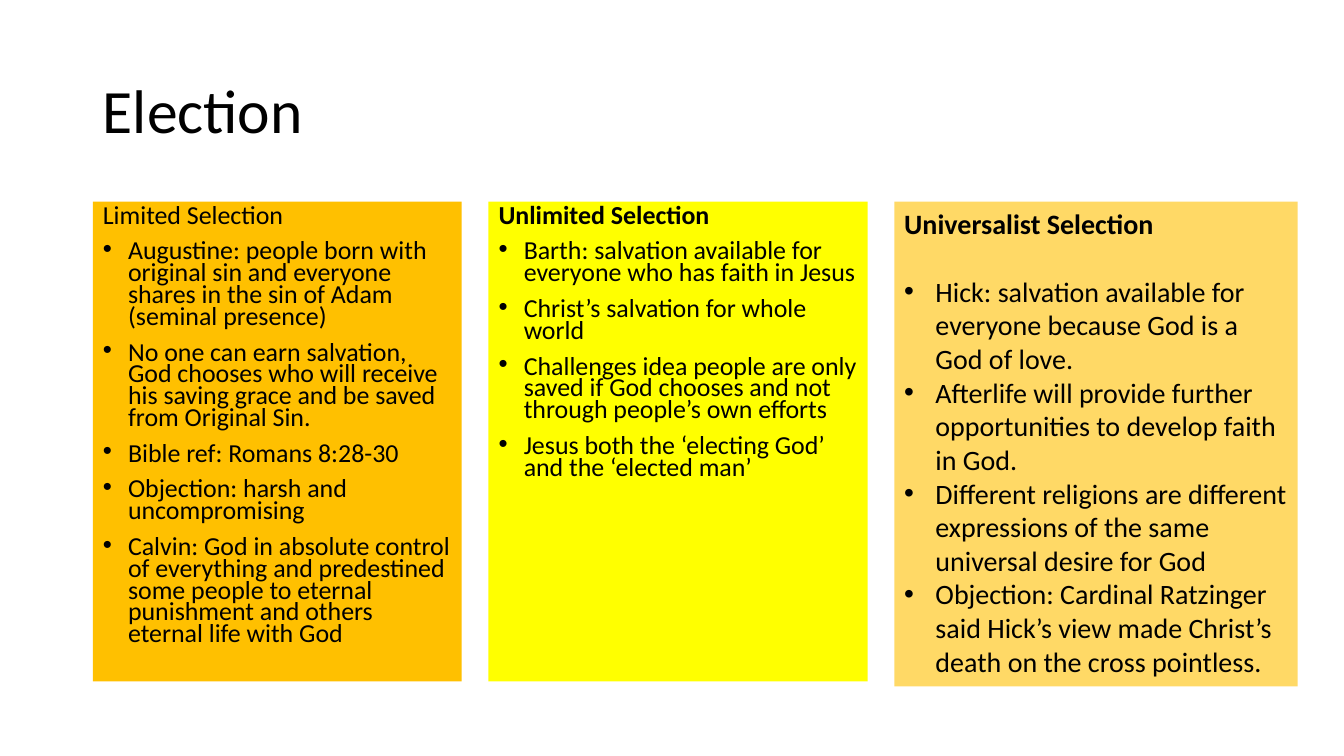
from dataclasses import dataclass

from lxml import etree
from pptx import Presentation
from pptx.dml.color import RGBColor
from pptx.enum.text import MSO_ANCHOR, MSO_AUTO_SIZE, PP_ALIGN
from pptx.oxml.ns import qn
from pptx.util import Inches, Pt

LEFT, MIDDLE, TOP = PP_ALIGN.LEFT, MSO_ANCHOR.MIDDLE, MSO_ANCHOR.TOP
NO_FIT, GROW = MSO_AUTO_SIZE.NONE, MSO_AUTO_SIZE.SHAPE_TO_FIT_TEXT

# Content
TITLE = "Election"
LIMITED = ("Limited Selection", [
    "Augustine: people born with original sin and everyone shares in the sin of Adam (seminal presence)",
    "No one can earn salvation, God chooses who will receive his saving grace and be saved from Original Sin.",
    "Bible ref: Romans 8:28-30",
    "Objection: harsh and uncompromising",
    "Calvin: God in absolute control of everything and predestined some people to eternal "
    "punishment and others eternal life with God",
])
UNLIMITED = ("Unlimited Selection", [
    "Barth: salvation available for everyone who has faith in Jesus",
    "Christ’s salvation for whole world",
    "Challenges idea people are only saved if God chooses and not through people’s own efforts",
    "Jesus both the ‘electing God’ and the ‘elected man’",
])
UNIVERSALIST = ("Universalist Selection", [
    "Hick: salvation available for everyone because God is a God of love.",
    "Afterlife will provide further opportunities to develop faith in God.",
    "Different religions are different expressions of the same universal desire for God",
    "Objection: Cardinal Ratzinger said Hick’s view made Christ’s death on the cross pointless.",
])


@dataclass(frozen=True)
class Theme:
    font: str = "Calibri"
    text: str = "000000"
    orange: str = "FFC000"
    yellow: str = "FFFF00"
    sand: str = "FFD966"
    title_size: float = 44
    dense_size: float = 18.5
    open_size: float = 20


@dataclass(frozen=True)
class ListStyle:
    size: float
    indent: float
    line: float
    before: float
    heading_after: float


T = Theme()
DENSE = ListStyle(T.dense_size, 0.25, 0.7, 10, 0)
OPEN = ListStyle(T.open_size, 0.31, 1.0, 0, 24.4)

# Grid, in inches
SLIDE_W, SLIDE_H = 13.33, 7.5
MARGIN, GAP = 0.92, 0.265
TITLE_TOP, TITLE_H = 0.4, 1.45
COLUMN_TOP = 2

# Content, style, fill, width, height, bold heading
COLUMNS = [
    (LIMITED, DENSE, T.orange, 3.66, 4.76, False),
    (UNLIMITED, DENSE, T.yellow, 3.76, 4.76, True),
    (UNIVERSALIST, OPEN, T.sand, 4.0, 4.81, True),
]


def place(sp, x, y, w, h):
    sp.left, sp.top, sp.width, sp.height = (Inches(v) for v in (x, y, w, h))


def add_run(p, text, size, bold=False):
    r = p.add_run()
    r.text = text
    r.font.name, r.font.size, r.font.bold = T.font, Pt(size), bold
    r.font.color.rgb = RGBColor.from_string(T.text)


def set_bullet(p, indent):
    pPr = p._p.get_or_add_pPr()
    pPr.set("marL", str(Inches(indent)))
    pPr.set("indent", str(-Inches(indent)))
    if indent:
        etree.SubElement(pPr, qn("a:buFont")).set("typeface", "Arial")
        etree.SubElement(pPr, qn("a:buChar")).set("char", "•")
    else:
        etree.SubElement(pPr, qn("a:buNone"))


def fill_column(sp, content, style, color, bold):
    heading, points = content
    sp.fill.solid()
    sp.fill.fore_color.rgb = RGBColor.from_string(color)
    tf = sp.text_frame
    tf.word_wrap, tf.vertical_anchor = True, TOP
    tf.auto_size = GROW if style is OPEN else NO_FIT
    for i, text in enumerate([heading, *points]):
        p = tf.add_paragraph() if i else tf.paragraphs[0]
        p.alignment, p.line_spacing = LEFT, style.line
        p.space_before = Pt(style.before)
        p.space_after = Pt(0 if i else style.heading_after)
        set_bullet(p, style.indent if i else 0)
        add_run(p, text, style.size, bold and i == 0)


def main():
    prs = Presentation()
    prs.slide_width, prs.slide_height = Inches(SLIDE_W), Inches(SLIDE_H)
    s = prs.slides.add_slide(prs.slide_layouts.get_by_name("Two Content"))

    # Title
    title = s.shapes.title
    place(title, MARGIN, TITLE_TOP, SLIDE_W - 2 * MARGIN, TITLE_H)
    tf = title.text_frame
    tf.vertical_anchor, tf.auto_size = MIDDLE, NO_FIT
    p = tf.paragraphs[0]
    p.alignment, p.line_spacing = LEFT, 0.9
    add_run(p, TITLE, T.title_size)

    # Three columns: two body placeholders and a text box
    boxes = [s.placeholders[1], s.placeholders[2], s.shapes.add_textbox(0, 0, 0, 0)]
    x = MARGIN
    for sp, (content, style, color, w, h, bold) in zip(boxes, COLUMNS):
        place(sp, x, COLUMN_TOP, w, h)
        fill_column(sp, content, style, color, bold)
        x += w + GAP

    prs.save("out.pptx")


if __name__ == "__main__":
    main()
